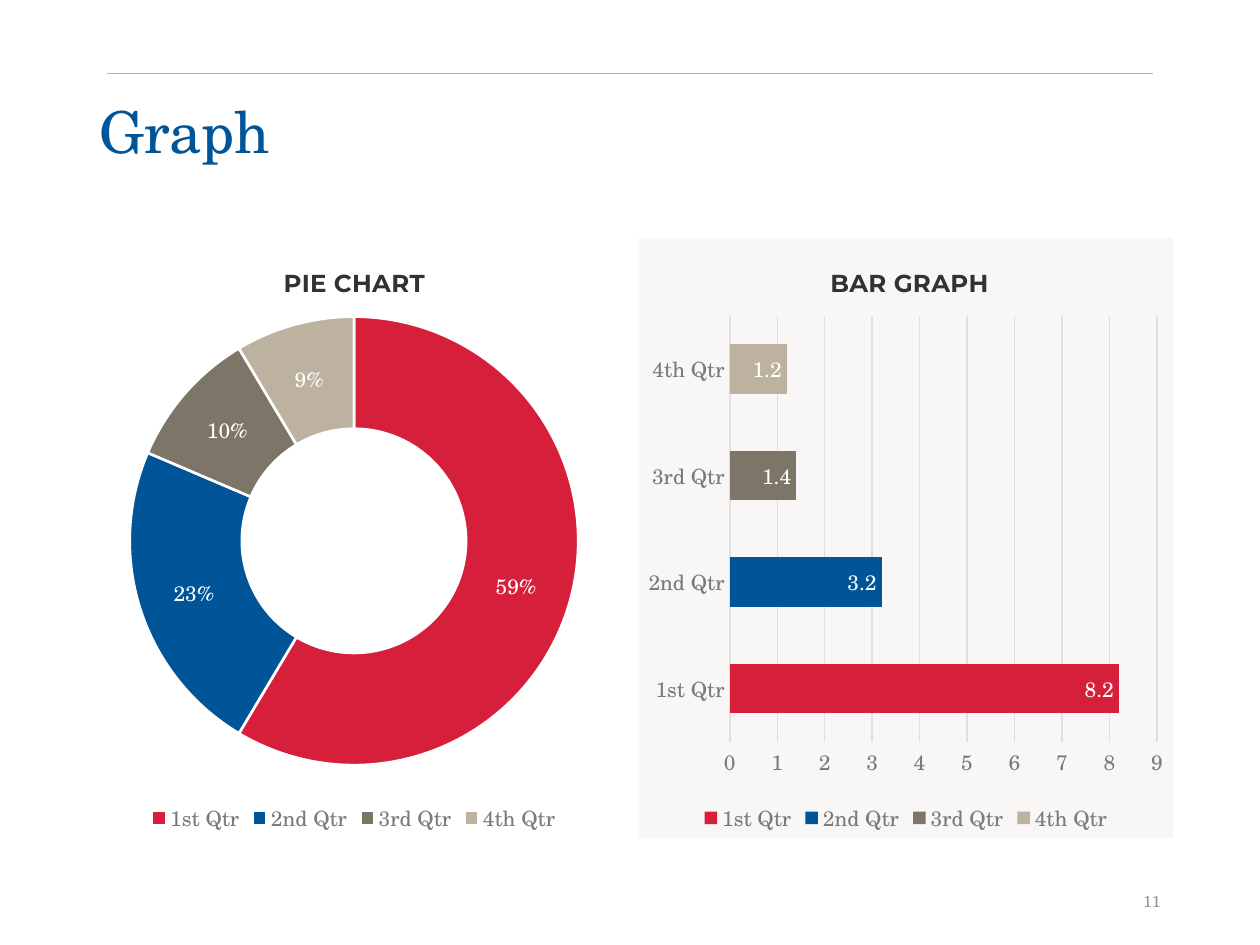
from lxml import etree
from pptx import Presentation
from pptx import util as u
from pptx.chart.data import CategoryChartData
from pptx.dml.color import RGBColor
from pptx.enum import chart as ch, shapes, text
from pptx.oxml import parse_xml
from pptx.oxml.ns import nsdecls, qn

PX = 914400 / 126
SERIF, SANS = "TeX Gyre Schola", "Montserrat"


def rgb(h):
    return RGBColor.from_string(h)


def set_layout(parent, index, values):
    for old in parent.findall(qn("c:layout")):
        parent.remove(old)
    layout = etree.Element(qn("c:layout"))
    manual = etree.SubElement(layout, qn("c:manualLayout"))
    items = {"xMode": "edge", "yMode": "edge", **values}
    if "w" in values:
        items = {"layoutTarget": "inner", **items}
    for tag, val in items.items():
        etree.SubElement(manual, qn("c:" + tag)).set("val", str(val))
    parent.insert(index, layout)


prs = Presentation()
prs.slide_width, prs.slide_height = u.Emu(round(1260 * PX)), u.Emu(round(945 * PX))
s = prs.slides.add_slide(prs.slide_layouts[6])

x1, y, x2 = (round(v * PX) for v in (107, 73, 1153))
ln = s.shapes.add_connector(shapes.MSO_CONNECTOR.STRAIGHT, x1, y, x2, y)
ln.line.color.rgb = rgb("BCB29F")
ln.line.width = u.Pt(0.5)
etree.SubElement(ln._element.spPr, qn("a:effectLst"))

texts = [
    ("Graph", (87, 97, 1086, 140), 33, "005498",
     {"alignment": text.PP_ALIGN.LEFT, "line_spacing": 0.9}, text.MSO_ANCHOR.TOP),
    ("11", (890, 876, 283, 50), 9, "909090",
     {"alignment": text.PP_ALIGN.RIGHT}, text.MSO_ANCHOR.MIDDLE),
]
for words, box, size, color, fmt, anchor in texts:
    tf = s.shapes.add_textbox(*(round(v * PX) for v in box)).text_frame
    tf.word_wrap = True
    tf.vertical_anchor = anchor
    p = tf.paragraphs[0]
    for name, val in fmt.items():
        setattr(p, name, val)
    r = p.add_run()
    r.text = words
    r.font.name, r.font.size, r.font.color.rgb = SERIF, u.Pt(size), rgb(color)

quarters = ["1st Qtr", "2nd Qtr", "3rd Qtr", "4th Qtr"]
sales = [8.2, 3.2, 1.4, 1.2]
colors = ["D61F3B", "005498", "7D7668", "BCB29F"]
charts = [
    ("PIE CHART", ch.XL_CHART_TYPE.DOUGHNUT, 87, "FFFFFF", {"x": 0.36, "y": 0.04},
     {"x": 0.08, "y": 0.13, "w": 0.84, "h": 0.75}, {"show_percentage": True, "show_value": False, "number_format": "0%"}),
    ("BAR GRAPH", ch.XL_CHART_TYPE.BAR_CLUSTERED, 639, "F8F7F5", {"x": 0.35, "y": 0.04},
     {"x": 0.17, "y": 0.13, "w": 0.8, "h": 0.71},
     {"show_value": True, "number_format": "General", "position": ch.XL_LABEL_POSITION.INSIDE_END}),
]
for title, kind, left, fill, title_at, plot_at, label_fmt in charts:
    data = CategoryChartData()
    data.categories = quarters
    data.add_series("Series 1", sales)
    box = (round(v * PX) for v in (left, 238, 534, 600))
    chart = s.shapes.add_chart(kind, *box, data).chart
    chart.font.name, chart.font.size, chart.font.color.rgb = SERIF, u.Pt(10), rgb("323232")
    chart._chartSpace.find(qn("c:chart")).addnext(parse_xml(
        f'<c:spPr {nsdecls("c", "a")}><a:solidFill><a:srgbClr val="{fill}"/></a:solidFill>'
        '<a:ln><a:noFill/></a:ln></c:spPr>'))

    chart.has_title = True
    tf = chart.chart_title.text_frame
    tf.text = title
    f = tf.paragraphs[0].runs[0].font
    f.name, f.size, f.bold, f.color.rgb = SANS, u.Pt(14), True, rgb("323232")
    set_layout(chart.chart_title._element, 1, title_at)
    set_layout(chart._chartSpace.chart.plotArea, 0, plot_at)

    chart.has_legend = True
    chart.legend.position = ch.XL_LEGEND_POSITION.BOTTOM
    chart.legend.include_in_layout = False
    plot = chart.plots[0]
    plot.vary_by_categories = True
    plot.has_data_labels = True
    labels = plot.data_labels
    for name, val in {"number_format_is_linked": False, **label_fmt}.items():
        setattr(labels, name, val)
    fonts = [(chart.legend.font, "7A7A7A"), (labels.font, "FFFFFF")]

    for i, color in enumerate(colors):
        pt = plot.series[0].points[i].format
        pt.fill.solid()
        pt.fill.fore_color.rgb = rgb(color)
        if kind == ch.XL_CHART_TYPE.DOUGHNUT:
            pt.line.color.rgb = rgb("FFFFFF")
            pt.line.width = u.Pt(1.5)

    if kind == ch.XL_CHART_TYPE.BAR_CLUSTERED:
        plot.gap_width, plot.overlap = 115, -20
        cat, val_axis = chart.category_axis, chart.value_axis
        for axis in (cat, val_axis):
            axis.major_tick_mark = axis.minor_tick_mark = ch.XL_TICK_MARK.NONE
            fonts.append((axis.tick_labels.font, "7A7A7A"))
        cat.format.line.color.rgb = rgb("E0E0E0")
        cat.format.line.width = u.Pt(1)
        for name, val in {"minimum_scale": 0, "maximum_scale": 9, "major_unit": 1}.items():
            setattr(val_axis, name, val)
        val_axis.format.line.fill.background()
        grid = val_axis.major_gridlines.format.line
        grid.color.rgb = rgb("E0E0E0")
        grid.width = u.Pt(0.75)

    for f, color in fonts:
        f.name, f.size, f.color.rgb = SERIF, u.Pt(12), rgb(color)

prs.save("out.pptx")
